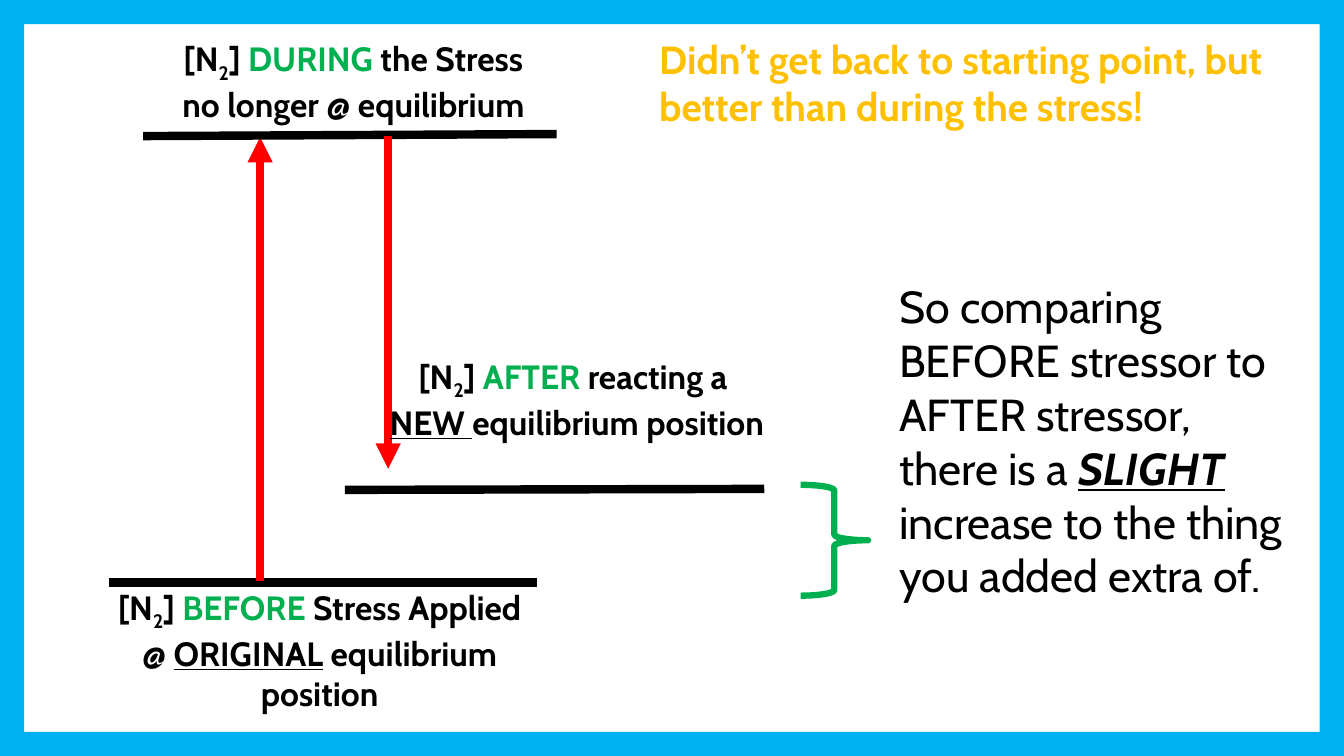
from dataclasses import dataclass

from lxml.etree import SubElement
from pptx import Presentation
from pptx.dml.color import RGBColor
from pptx.enum.shapes import MSO_CONNECTOR, MSO_SHAPE
from pptx.enum.text import MSO_AUTO_SIZE, PP_ALIGN
from pptx.oxml.ns import qn
from pptx.util import Inches, Pt


@dataclass(frozen=True)
class Theme:
    font: str = "Cabin"
    ink: RGBColor = RGBColor(0, 0, 0)
    stage: RGBColor = RGBColor(0x00, 0xB0, 0x50)
    arrow: RGBColor = RGBColor(0xFF, 0, 0)
    remark: RGBColor = RGBColor(0xFF, 0xC0, 0)
    border: RGBColor = RGBColor(0x00, 0xB0, 0xF0)
    label_size: int = 24
    remark_size: int = 28
    summary_size: int = 32
    line_width: float = 6
    brace_width: float = 4.5


THEME = Theme()


def add_line(s, start, end, color, arrow=False):
    line = s.shapes.add_connector(
        MSO_CONNECTOR.STRAIGHT, *map(Inches, start + end))
    line.line.color.rgb = color
    line.line.width = Pt(THEME.line_width)
    if arrow:
        SubElement(line.line._get_or_add_ln(), qn("a:tailEnd"), type="triangle")
    SubElement(line._element.spPr, qn("a:effectLst"))


def add_shape(s, kind, box):
    sp = s.shapes.add_shape(kind, *map(Inches, box))
    sp.shadow.inherit = False
    return sp


def add_text(s, box, runs, size, color=THEME.ink, bold=False,
             align=PP_ALIGN.LEFT):
    """Add one paragraph of (text, style) runs; a newline is a line break."""
    tf = s.shapes.add_textbox(*map(Inches, box)).text_frame
    tf.word_wrap = True
    tf.auto_size = MSO_AUTO_SIZE.SHAPE_TO_FIT_TEXT
    p = tf.paragraphs[0]
    p.alignment = align
    for text, style in runs:
        for i, part in enumerate(text.split("\n")):
            if i:
                p.add_line_break()
            r = p.add_run()
            r.text = part
            r.font.name = THEME.font
            r.font.size = Pt(size)
            r.font.bold = style.get("bold", bold)
            r.font.italic = style.get("italic")
            r.font.underline = style.get("underline")
            r.font.color.rgb = style.get("color", color)
            if style.get("subscript"):
                r.font._element.set("baseline", "-25000")


def add_stage_label(s, box, stage, *rest):
    """Label a nitrogen level with its stage name in green."""
    runs = [("[N", {}), ("2", {"subscript": True}), ("] ", {}),
            (stage, {"color": THEME.stage}), *rest]
    add_text(s, box, runs, THEME.label_size, bold=True, align=PP_ALIGN.CENTER)


def main():
    prs = Presentation()
    prs.slide_width, prs.slide_height = Inches(13.33), Inches(7.5)
    s = prs.slides.add_slide(prs.slide_layouts[6])
    underlined = {"underline": True}

    add_line(s, (1.08, 5.78), (5.33, 5.78), THEME.ink)
    add_stage_label(s, (0.83, 5.77, 4.68, 1.31), "BEFORE",
                    (" Stress Applied\n@ ", {}), ("ORIGINAL", underlined),
                    (" equilibrium position", {}))
    add_line(s, (2.58, 5.76), (2.58, 1.36), THEME.arrow, arrow=True)

    add_line(s, (1.42, 1.35), (5.52, 1.33), THEME.ink)
    add_stage_label(s, (1.17, 0.33, 4.67, 0.91), "DURING",
                    (" the Stress\nno longer @ equilibrium", {}))
    add_line(s, (3.85, 1.35), (3.85, 4.65), THEME.arrow, arrow=True)

    add_line(s, (3.42, 4.86), (7.58, 4.85), THEME.ink)
    add_stage_label(s, (3.68, 3.48, 4.08, 1.31), "AFTER",
                    (" reacting a \n", {}), ("NEW ", underlined),
                    ("equilibrium position", {}))

    brace = add_shape(s, MSO_SHAPE.RIGHT_BRACE, (7.94, 4.81, 0.67, 1.1))
    brace.fill.background()
    brace.line.color.rgb = THEME.stage
    brace.line.width = Pt(THEME.brace_width)

    add_text(s, (8.82, 2.72, 4.04, 3.33), [
        ("So comparing BEFORE stressor to AFTER stressor, there is a ", {}),
        ("SLIGHT", {"bold": True, "italic": True, "underline": True}),
        (" increase to the thing you added extra of.", {}),
    ], THEME.summary_size)
    add_text(s, (6.44, 0.3, 6.56, 1.04), [
        ("Didn’t get back to starting point, but better than during "
         "the stress!", {}),
    ], THEME.remark_size, THEME.remark, bold=True)

    border = add_shape(s, MSO_SHAPE.FRAME, (0, 0, 13.33, 7.5))
    border.adjustments[0] = 0.032
    border.fill.solid()
    border.fill.fore_color.rgb = THEME.border
    border.line.fill.background()

    prs.save("out.pptx")


if __name__ == "__main__":
    main()
